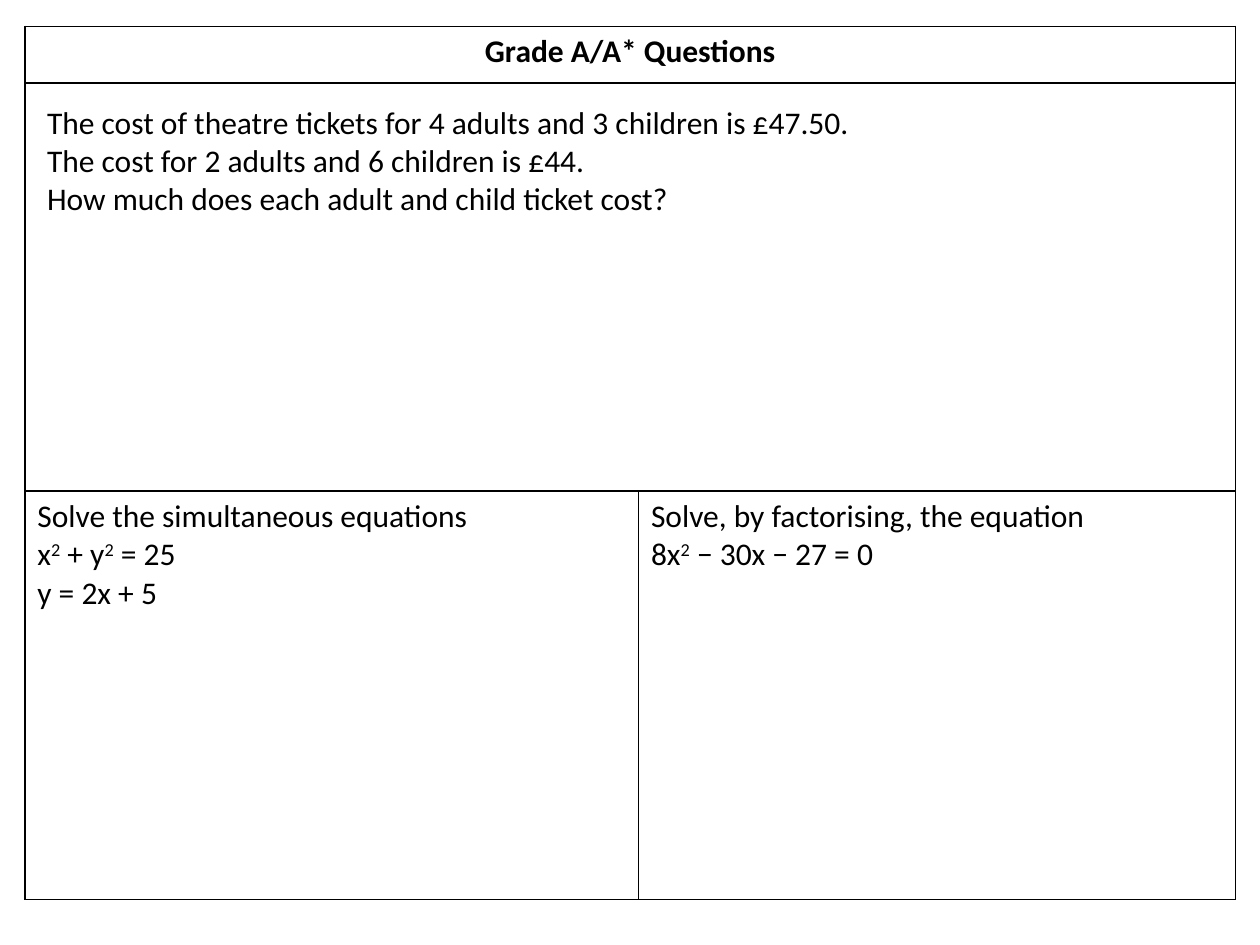
from lxml import etree
from pptx import Presentation
from pptx.dml.color import RGBColor
from pptx.enum import text as t
from pptx.oxml import ns
from pptx.util import Cm, Pt

TITLE = ["Grade A/A* Questions"]
TICKETS = [
    "The cost of theatre tickets for 4 adults and 3 children is £47.50.",
    "The cost for 2 adults and 6 children is £44.",
    "How much does each adult and child ticket cost?",
]
SIMULTANEOUS = ["Solve the simultaneous equations", "x^2^ + y^2^ = 25", "y = 2x + 5"]
FACTORISING = ["Solve, by factorising, the equation", "8x^2^ − 30x − 27 = 0"]

COLUMN_WIDTHS = [12.37, 12.04]
ROW_HEIGHTS = [1.14, 8.23, 8.23]
BLACK = "000000"


def color(value):
    return RGBColor.from_string(value)


def write(frame, lines, size=18, bold=False, align=t.PP_ALIGN.LEFT, font="Calibri", ink=BLACK):
    frame.word_wrap = True
    for index, line in enumerate(lines):
        paragraph = frame.paragraphs[0] if index == 0 else frame.add_paragraph()
        paragraph.alignment = align
        for position, part in enumerate(line.split("^")):
            run = paragraph.add_run()
            run.text = part
            run.font.name = font
            run.font.size = Pt(size)
            run.font.bold = bold
            run.font.color.rgb = color(ink)
            if position % 2:
                run.font._element.set("baseline", "30000")


def outline(cell, ink=BLACK, width=1):
    properties = cell._tc.get_or_add_tcPr()
    for index, side in enumerate(("lnL", "lnR", "lnT", "lnB")):
        line = etree.Element(ns.qn("a:" + side), w=str(Pt(width)))
        fill = etree.SubElement(line, ns.qn("a:solidFill"))
        etree.SubElement(fill, ns.qn("a:srgbClr"), val=ink)
        properties.insert(index, line)


def main():
    deck = Presentation()
    deck.slide_width, deck.slide_height = Cm(25.4), Cm(19.05)
    slide = deck.slides.add_slide(deck.slide_layouts[6])

    grid = slide.shapes.add_table(
        len(ROW_HEIGHTS), len(COLUMN_WIDTHS), Cm(0.5), Cm(0.53),
        Cm(sum(COLUMN_WIDTHS)), Cm(sum(ROW_HEIGHTS)),
    ).table
    grid.first_row = grid.horz_banding = False
    for column, width in zip(grid.columns, COLUMN_WIDTHS):
        column.width = Cm(width)
    for row, height in zip(grid.rows, ROW_HEIGHTS):
        row.height = Cm(height)
    for cell in grid.iter_cells():
        cell.fill.background()
        outline(cell)
    for row in (0, 1):
        grid.cell(row, 0).merge(grid.cell(row, 1))

    write(grid.cell(0, 0).text_frame, TITLE, bold=True, align=t.PP_ALIGN.CENTER)
    write(grid.cell(2, 0).text_frame, SIMULTANEOUS)
    write(grid.cell(2, 1).text_frame, FACTORISING)

    tickets = slide.shapes.add_textbox(Cm(0.7), Cm(1.96), Cm(20.2), Cm(3.33))
    write(tickets.text_frame, TICKETS)

    deck.save("out.pptx")


if __name__ == "__main__":
    main()
